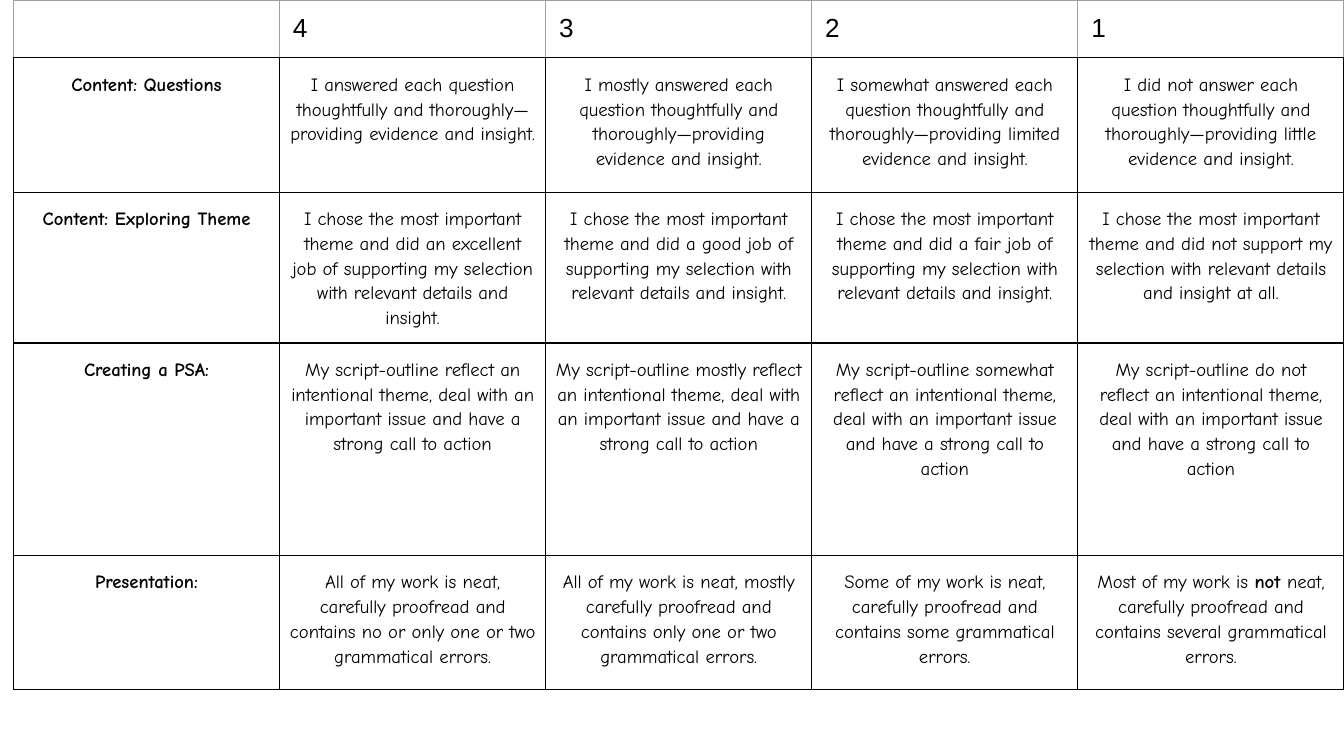
from dataclasses import dataclass

from lxml.etree import SubElement
from pptx import Presentation
from pptx.dml.color import RGBColor
from pptx.enum.text import PP_ALIGN
from pptx.oxml.ns import qn
from pptx.table import _Cell
from pptx.util import Inches, Pt

SLIDE_WIDTH = 10
SLIDE_HEIGHT = SLIDE_WIDTH * 9 / 16
TABLE_LEFT = 0.01 * SLIDE_WIDTH
COLUMN_WIDTH = 0.198 * SLIDE_WIDTH
BLACK, GRAY = "000000", "9E9E9E"
BORDER_WIDTH = 0.75
BOLD_MARK = "**"


@dataclass(frozen=True)
class CellStyle:
    font: str
    size: int
    side_inset: float
    alignment: PP_ALIGN
    line_spacing: float
    side_border: str
    top_border: str


@dataclass(frozen=True)
class RubricRow:
    height: float
    style: CellStyle
    title: str
    levels: tuple[str, ...]


HEADER = CellStyle("Arial", 14, 7.2, PP_ALIGN.LEFT, 1.0, GRAY, GRAY)
BODY = CellStyle("Comic Neue", 10, 5.4, PP_ALIGN.CENTER, 1.15, BLACK, BLACK)

ROWS = (
    RubricRow(0.43, HEADER, "", ("4", "3", "2", "1")),
    RubricRow(1, BODY, "Content: Questions", (
        "I answered each question thoughtfully and thoroughly—providing evidence and insight.",
        "I mostly answered each question thoughtfully and thoroughly—providing evidence and insight.",
        "I somewhat answered each question thoughtfully and thoroughly—providing limited evidence and insight.",
        "I did not answer each question thoughtfully and thoroughly—providing little evidence and insight.",
    )),
    RubricRow(1, BODY, "Content: Exploring Theme", (
        "I chose the most important theme and did an excellent job of supporting my selection with relevant details and insight.",
        "I chose the most important theme and did a good job of supporting my selection with relevant details and insight.",
        "I chose the most important theme and did a fair job of supporting my selection with relevant details and insight.",
        "I chose the most important theme and did not support my selection with relevant details and insight at all.",
    )),
    RubricRow(1.58, BODY, "Creating a PSA:", (
        "My script-outline reflect an intentional theme, deal with an important issue and have a strong call to action",
        "My script-outline mostly reflect an intentional theme, deal with an important issue and have a strong call to action",
        "My script-outline somewhat reflect an intentional theme, deal with an important issue and have a strong call to action",
        "My script-outline do not reflect an intentional theme, deal with an important issue and have a strong call to action",
    )),
    RubricRow(1, BODY, "Presentation:", (
        "All of my work is neat, carefully proofread and contains no or only one or two grammatical errors.",
        "All of my work is neat, mostly carefully proofread and contains only one or two grammatical errors.",
        "Some of my work is neat, carefully proofread and contains some grammatical errors.",
        "Most of my work is** not **neat, carefully proofread and contains several grammatical errors.",
    )),
)


def color(value: str) -> RGBColor:
    return RGBColor.from_string(value)


def draw_borders(cell: _Cell, style: CellStyle) -> None:
    properties = cell._tc.get_or_add_tcPr()
    borders = {
        "a:lnL": style.side_border,
        "a:lnR": style.side_border,
        "a:lnT": style.top_border,
        "a:lnB": BLACK,
    }
    for tag, value in borders.items():
        line = SubElement(properties, qn(tag), w=str(int(Pt(BORDER_WIDTH))))
        fill = SubElement(line, qn("a:solidFill"))
        SubElement(fill, qn("a:srgbClr"), val=str(color(value)))


def write_text(cell: _Cell, text: str, style: CellStyle) -> None:
    cell.margin_left = cell.margin_right = Pt(style.side_inset)
    cell.margin_top = cell.margin_bottom = Inches(0.1)
    paragraph = cell.text_frame.paragraphs[0]
    paragraph.alignment = style.alignment
    paragraph.line_spacing = style.line_spacing
    for index, part in enumerate(text.split(BOLD_MARK)):
        if part:
            run = paragraph.add_run()
            run.text = part
            run.font.name = style.font
            run.font.size = Pt(style.size)
            run.font.bold = index % 2 == 1
            run.font.color.rgb = color(BLACK)


def main() -> None:
    presentation = Presentation()
    presentation.slide_width = Inches(SLIDE_WIDTH)
    presentation.slide_height = Inches(SLIDE_HEIGHT)
    slide = presentation.slides.add_slide(presentation.slide_layouts[6])

    column_count = 1 + len(ROWS[0].levels)
    table = slide.shapes.add_table(
        len(ROWS), column_count, Inches(TABLE_LEFT), 0,
        Inches(COLUMN_WIDTH * column_count), Inches(sum(row.height for row in ROWS)),
    ).table
    table.first_row = table.horz_banding = False
    for column in table.columns:
        column.width = Inches(COLUMN_WIDTH)

    for row_index, row in enumerate(ROWS):
        table.rows[row_index].height = Inches(row.height)
        title = f"{BOLD_MARK}{row.title}{BOLD_MARK}" if row.title else ""
        for column_index, text in enumerate((title, *row.levels)):
            cell = table.cell(row_index, column_index)
            draw_borders(cell, row.style)
            cell.fill.background()
            if text:
                write_text(cell, text, row.style)

    presentation.save("out.pptx")


if __name__ == "__main__":
    main()
